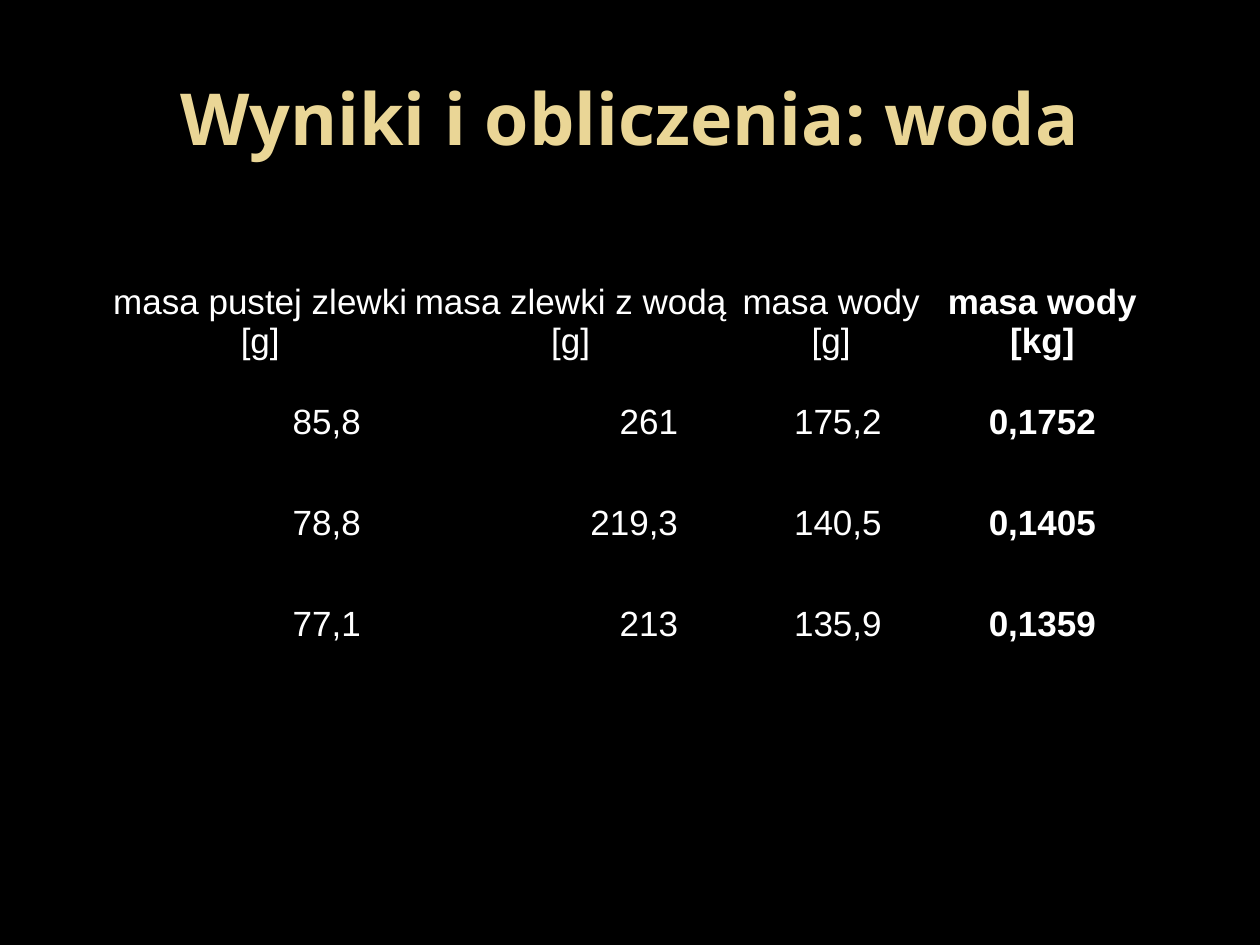
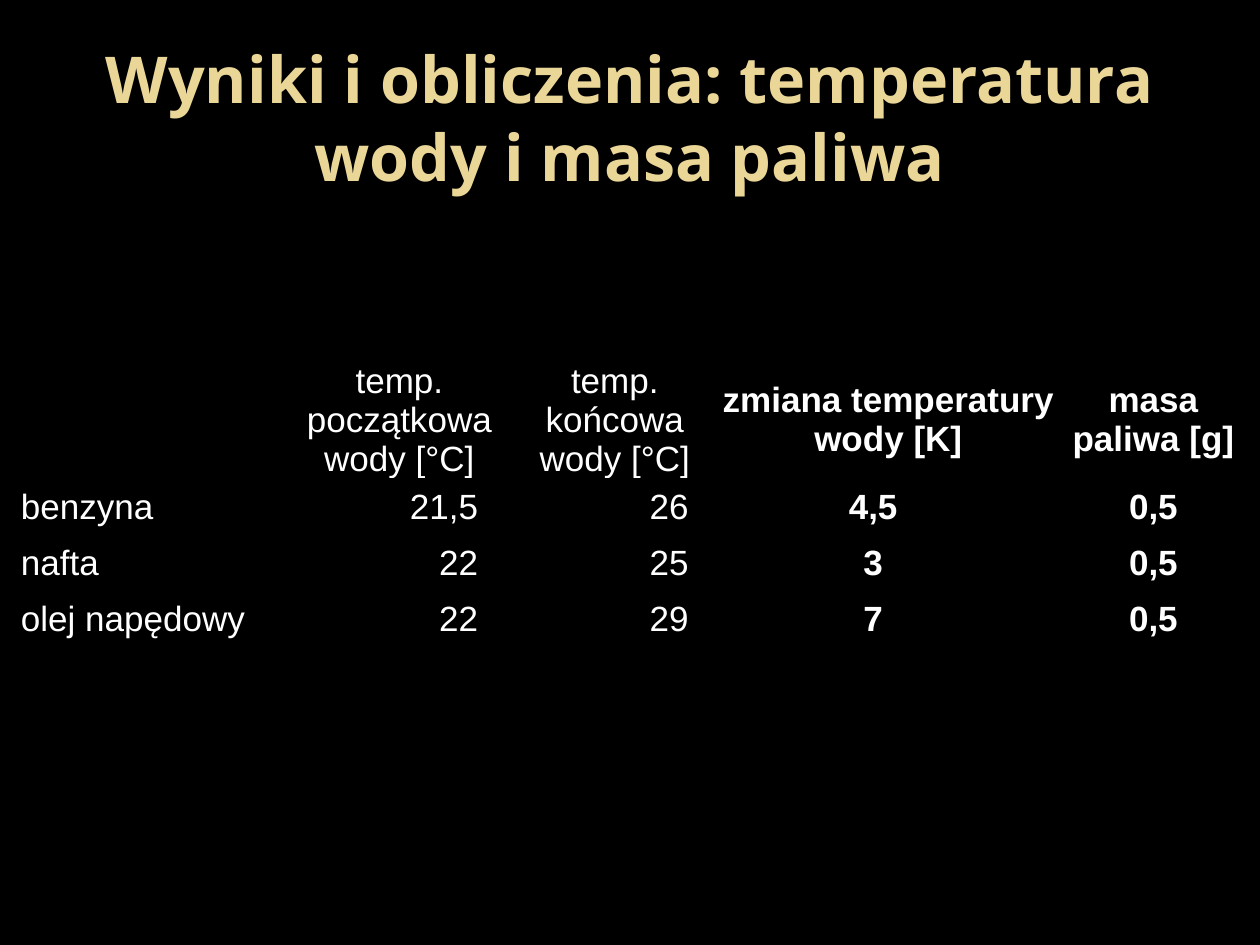
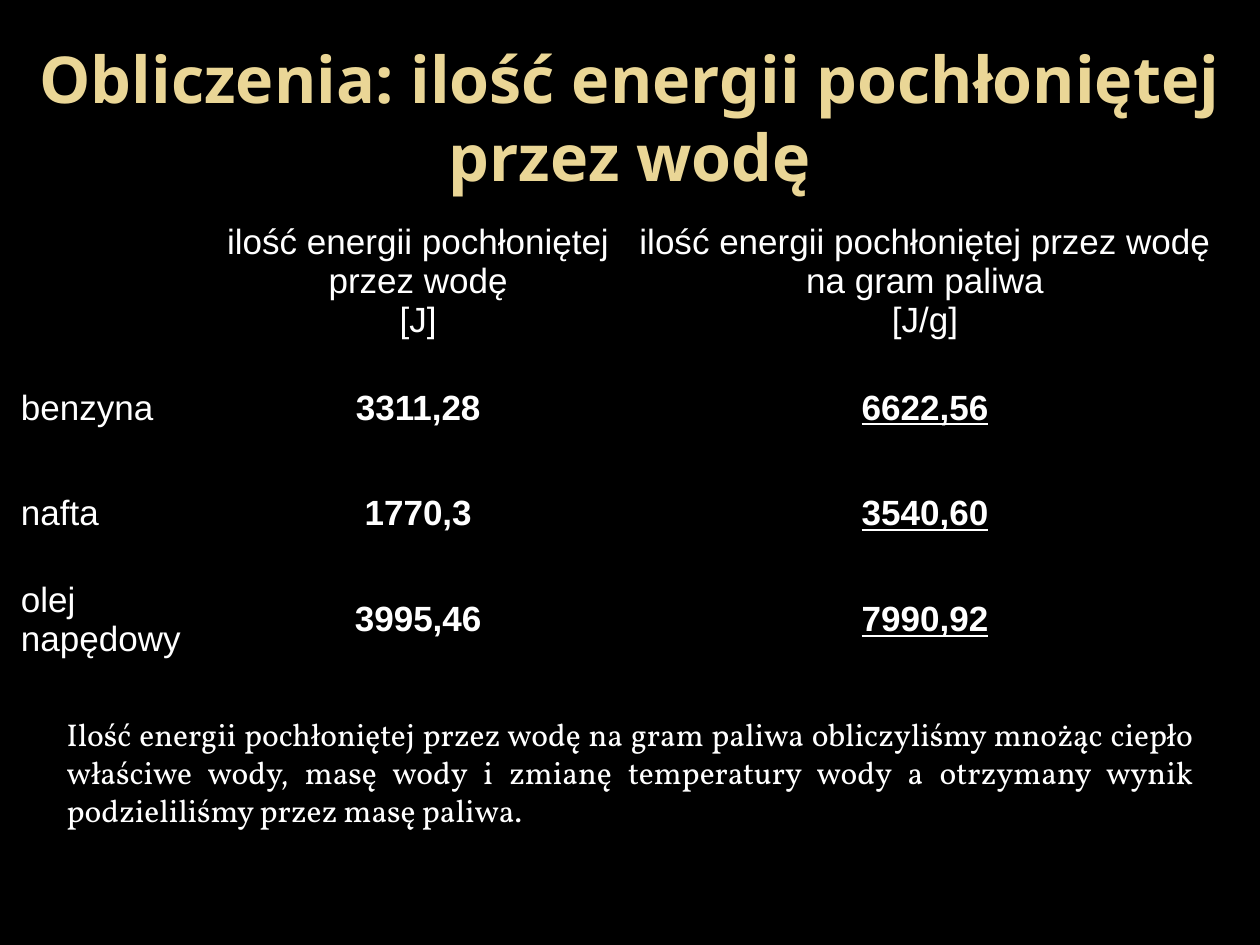
from dataclasses import dataclass

from lxml.etree import SubElement
from pptx import Presentation
from pptx.dml.color import RGBColor as RGB
from pptx.enum.text import MSO_ANCHOR as ANCHOR
from pptx.enum.text import MSO_AUTO_SIZE as FIT
from pptx.enum.text import PP_ALIGN as ALIGN
from pptx.oxml.ns import qn
from pptx.util import Pt


@dataclass(frozen=True)
class Theme:
    back: str = "000000"
    title: str = "EAD696"
    text: str = "FFFFFF"
    title_font: str = "Noto Sans"
    table_font: str = "Arial"
    note_font: str = "Vollkorn"
    title_size: float = 41
    long_title_size: float = 36.9
    table_size: float = 20
    note_size: float = 18
    cell_inset: float = 0.75
    border: float = 1


@dataclass(frozen=True)
class Column:
    width: float
    align: ALIGN = ALIGN.CENTER
    inset: float = Theme.cell_inset
    bold: bool = False
    underline: bool = False
    bold_head: bool = False


THEME = Theme()
TITLE_ONLY = 5


def set_attrs(obj, values):
    for name, value in values.items():
        setattr(obj, name, value)


def style_text(tf, align, font, size, color, **extra):
    """Format every paragraph of a text frame alike."""
    for p in tf.paragraphs:
        p.alignment = align
        set_attrs(p.font, dict(name=font, size=Pt(size), **extra))
        p.font.color.rgb = RGB.from_string(color)


def place(sp, left, top, width, height):
    set_attrs(sp, dict(left=Pt(left), top=Pt(top), width=Pt(width), height=Pt(height)))


def add_slide(prs, title, size, left=0):
    """Add a slide whose title is centred between equal side margins."""
    s = prs.slides.add_slide(prs.slide_layouts[TITLE_ONLY])
    sp = s.shapes.title
    place(sp, left, 21.6, 720 - 2 * left, 90)
    tf = sp.text_frame
    tf.text = title
    set_attrs(tf, dict(word_wrap=True, auto_size=FIT.NONE,
                       vertical_anchor=ANCHOR.MIDDLE))
    style_text(tf, ALIGN.CENTER, THEME.title_font, size, THEME.title, bold=True)
    return s


def add_borders(cell):
    tc_pr = cell._tc.get_or_add_tcPr()
    for i, side in enumerate(("lnL", "lnR", "lnT", "lnB")):
        ln = tc_pr.makeelement(qn(f"a:{side}"), {"w": str(Pt(THEME.border))})
        fill = SubElement(ln, qn("a:solidFill"))
        SubElement(fill, qn("a:srgbClr"), val=THEME.back)
        tc_pr.insert(i, ln)


def fill_cell(cell, text, col, is_head):
    cell.text = text
    inset = THEME.cell_inset if is_head else col.inset
    set_attrs(cell, dict(margin_left=Pt(THEME.cell_inset), margin_right=Pt(inset),
                         margin_top=Pt(THEME.cell_inset), margin_bottom=0,
                         vertical_anchor=ANCHOR.MIDDLE))
    style_text(cell.text_frame, ALIGN.CENTER if is_head else col.align,
               THEME.table_font, THEME.table_size, THEME.text,
               bold=col.bold_head if is_head else col.bold,
               underline=col.underline and not is_head)
    cell.fill.background()
    add_borders(cell)


def add_results(s, left, top, cols, head_height, row_height, rows):
    """Add a table; its first row holds the headings."""
    heights = [head_height] + [row_height] * (len(rows) - 1)
    frame = s.shapes.add_table(len(rows), len(cols), Pt(left), Pt(top),
                               Pt(sum(c.width for c in cols)), Pt(sum(heights)))
    table = frame.table
    set_attrs(table, dict(first_row=False, horz_banding=False))
    for i, col in enumerate(cols):
        table.columns[i].width = Pt(col.width)
    for r, (height, texts) in enumerate(zip(heights, rows)):
        table.rows[r].height = Pt(height)
        for c, (col, text) in enumerate(zip(cols, texts)):
            fill_cell(table.cell(r, c), text, col, r == 0)


def add_note(s, left, top, width, height, text):
    tf = s.shapes.add_textbox(Pt(left), Pt(top), Pt(width), Pt(height)).text_frame
    tf.text = text
    set_attrs(tf, dict(word_wrap=True, auto_size=FIT.SHAPE_TO_FIT_TEXT))
    style_text(tf, ALIGN.JUSTIFY, THEME.note_font, THEME.note_size, THEME.text)


def water_slide(prs):
    s = add_slide(prs, "Wyniki i obliczenia: woda", THEME.title_size, left=36)
    number = dict(align=ALIGN.RIGHT, inset=29.3)
    cols = [Column(173.5, **number), Column(181.3, **number),
            Column(116.4, **number), Column(125, bold=True, bold_head=True)]
    add_results(s, 62, 154.8, cols, 57.6, 57.6, [
        ("masa pustej zlewki [g]", "masa zlewki z wodą [g]", "masa wody [g]",
         "masa wody [kg]"),
        ("85,8", "261", "175,2", "0,1752"),
        ("78,8", "219,3", "140,5", "0,1405"),
        ("77,1", "213", "135,9", "0,1359"),
    ])


def temperature_slide(prs):
    s = add_slide(prs, "Wyniki i obliczenia: temperatura wody i masa paliwa",
                  THEME.long_title_size)
    number = dict(align=ALIGN.RIGHT, inset=18)
    result = dict(bold=True, bold_head=True)
    cols = [Column(154, ALIGN.LEFT), Column(126, **number), Column(120.25, **number),
            Column(192.25, inset=18, **result), Column(110.75, **result)]
    add_results(s, 11.25, 205.8, cols, 67.75, 32, [
        ("", "temp. początkowa wody [°C]", "temp. końcowa wody [°C]",
         "zmiana temperatury wody [K]", "masa paliwa [g]"),
        ("benzyna", "21,5", "26", "4,5", "0,5"),
        ("nafta", "22", "25", "3", "0,5"),
        ("olej napędowy", "22", "29", "7", "0,5"),
    ])


def energy_slide(prs):
    s = add_slide(prs, "Obliczenia: ilość energii pochłoniętej przez wodę",
                  THEME.long_title_size)
    cols = [Column(112.5, ALIGN.LEFT), Column(230.5, bold=True),
            Column(348.75, bold=True, underline=True)]
    add_results(s, 11.25, 118, cols, 84.5, 60.5, [
        ("", "ilość energii pochłoniętej przez wodę\n[J]",
         "ilość energii pochłoniętej przez wodę na gram paliwa\v[J/g]"),
        ("benzyna", "3311,28", "6622,56"),
        ("nafta", "1770,3", "3540,60"),
        ("olej napędowy", "3995,46", "7990,92"),
    ])
    add_note(s, 31, 405.2, 658, 72.75,
             "Ilość energii pochłoniętej przez wodę na gram paliwa obliczyliśmy "
             "mnożąc ciepło właściwe wody, masę wody i zmianę temperatury wody "
             "a otrzymany wynik podzieliliśmy przez masę paliwa.")


def main():
    prs = Presentation()
    set_attrs(prs, dict(slide_width=Pt(720), slide_height=Pt(540)))
    # Shared black background
    fill = prs.slide_master.background.fill
    fill.solid()
    fill.fore_color.rgb = RGB.from_string(THEME.back)
    # Slides
    for build in (water_slide, temperature_slide, energy_slide):
        build(prs)
    prs.save("out.pptx")


if __name__ == "__main__":
    main()
